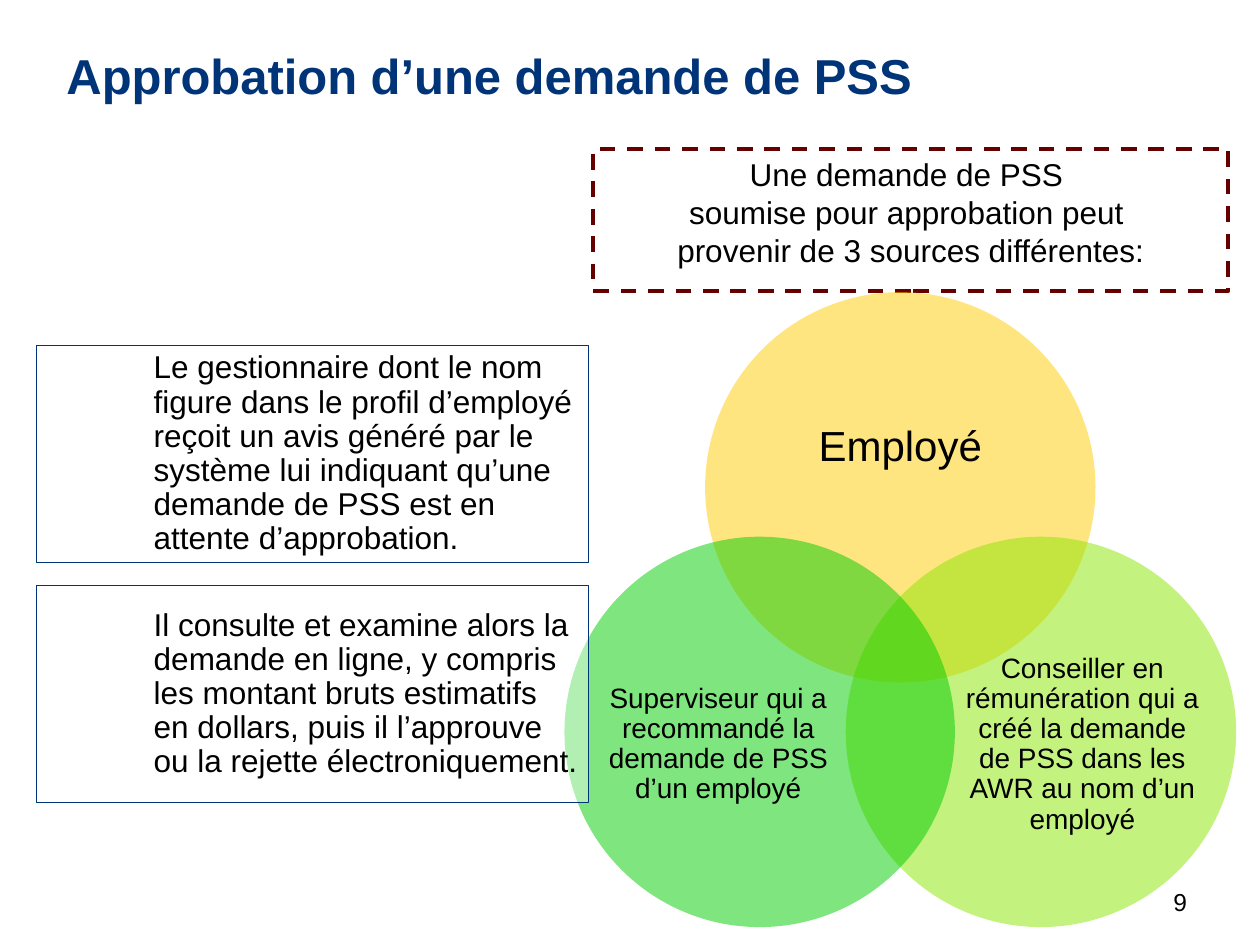
from lxml import etree
from pptx import Presentation
from pptx.dml.color import RGBColor
from pptx.enum.dml import MSO_LINE
from pptx.enum.shapes import MSO_SHAPE
from pptx.enum.text import MSO_ANCHOR, PP_ALIGN
from pptx.oxml.ns import qn
from pptx.util import Cm, Pt

OVAL, RECT = MSO_SHAPE.OVAL, MSO_SHAPE.RECTANGLE
LEFT, CENTER, RIGHT = PP_ALIGN.LEFT, PP_ALIGN.CENTER, PP_ALIGN.RIGHT
TOP, MIDDLE = MSO_ANCHOR.TOP, MSO_ANCHOR.MIDDLE
DASH = MSO_LINE.DASH

FONT = "Arial"
NAVY, MAROON, BLACK, WHITE = "003478", "660000", "000000", "FFFFFF"
INSETS = (0.25, 0.13, 0.25, 0.13)


def color(hex_code):
    return RGBColor.from_string(hex_code)


def write(shape, text, size, align=LEFT, anchor=TOP, insets=INSETS,
          spacing=1.0, ink=BLACK, bold=False):
    frame = shape.text_frame
    frame.word_wrap = True
    frame.vertical_anchor = anchor
    (frame.margin_left, frame.margin_top,
     frame.margin_right, frame.margin_bottom) = map(Cm, insets)
    frame.text = text
    paragraph = frame.paragraphs[0]
    paragraph.alignment = align
    paragraph.line_spacing = spacing
    font = paragraph.font
    font.name, font.size, font.bold = FONT, Pt(size), bold
    font.color.rgb = color(ink)


def add_text(slide, box, text, size, **style):
    text_box = slide.shapes.add_textbox(*map(Cm, box))
    write(text_box, text, size, **style)
    return text_box


def add_translucent(slide, kind, box, fill, opacity):
    shape = slide.shapes.add_shape(kind, *map(Cm, box))
    shape.shadow.inherit = False
    shape.fill.solid()
    shape.fill.fore_color.rgb = color(fill)
    shape.line.fill.background()
    rgb = shape.fill._xPr.find(qn("a:solidFill")).find(qn("a:srgbClr"))
    etree.SubElement(rgb, qn("a:alpha")).set("val", str(opacity * 1000))
    return shape


def add_intro(slide, box):
    intro = add_text(
        slide, box,
        "Une demande de PSS \vsoumise pour approbation peut \v"
        "provenir de 3 sources différentes:", 18, align=CENTER)
    intro.line.color.rgb = color(MAROON)
    intro.line.width = Pt(2.25)
    intro.line.dash_style = DASH


def add_sources(slide, box):
    """Three overlapping circles: one at top centre, two in the lower corners."""
    left, top, width, height = box
    diameter = 7.87
    right_x, low_y = width - diameter, height - diameter
    side_width, side_margin = 4.72, 0.74
    # circle offset, fill, label offset in circle and size, text, text size
    sources = [
        ((right_x / 2, 0), "FFCC00", (1.05, 1.37, 5.77, 3.53), "Employé", 24),
        ((right_x, low_y), "8AE600",
         (diameter - side_width - side_margin, 2.03, side_width, 4.32),
         "Conseiller en rémunération qui a créé la demande de PSS "
         "dans les AWR au nom d’un employé", 16),
        ((0, low_y), "00CC00", (side_margin, 2.03, side_width, 4.32),
         "Superviseur qui a recommandé la demande de PSS d’un employé", 16),
    ]
    for (dx, dy), fill, (label_x, label_y, label_w, label_h), text, size in sources:
        x, y = left + dx, top + dy
        add_translucent(slide, OVAL, (x, y, diameter, diameter), fill, 50)
        add_text(slide, (x + label_x, y + label_y, label_w, label_h), text, size,
                 align=CENTER, anchor=MIDDLE, insets=(0, 0, 0, 0), spacing=0.9)


def add_steps(slide, box):
    """Two outlined boxes stacked with a gap."""
    left, top, width, height = box
    gap = 0.46
    step_height = (height - gap) / 2
    steps = [
        "Le gestionnaire dont le nom figure dans le profil d’employé reçoit un "
        "avis généré par le système lui indiquant qu’une demande de PSS est en "
        "attente d’approbation.",
        "Il consulte et examine alors la demande en ligne, y compris les montant "
        "bruts estimatifs en dollars, puis il l’approuve ou la rejette "
        "électroniquement.",
    ]
    for index, text in enumerate(steps):
        y = top + index * (step_height + gap)
        step = add_translucent(slide, RECT, (left, y, width, step_height), WHITE, 40)
        step.line.color.rgb = color(NAVY)
        step.line.width = Pt(0.75)
        write(step, text, 18, anchor=MIDDLE,
              insets=(2.36, 0.18, 0.18, 0.18), spacing=0.9)


def main():
    deck = Presentation()
    deck.slide_width, deck.slide_height = Cm(25.4), Cm(19.05)
    slide = deck.slides.add_slide(deck.slide_layouts[6])

    # Page number and title
    add_text(slide, (18.9, 17.75, 5.28, 0.74), "9", 14, align=RIGHT)
    add_text(slide, (1.09, 0.76, 23.19, 1.52), "Approbation d’une demande de PSS",
             28, anchor=MIDDLE, ink=NAVY, bold=True)

    # Sources on the right, approval steps on the left
    add_intro(slide, (11.96, 3, 12.8, 2.87))
    add_sources(slide, (11.38, 5.89, 13.54, 12.8))
    add_steps(slide, (0.74, 6.96, 11.13, 9.22))

    deck.save("out.pptx")


if __name__ == "__main__":
    main()
